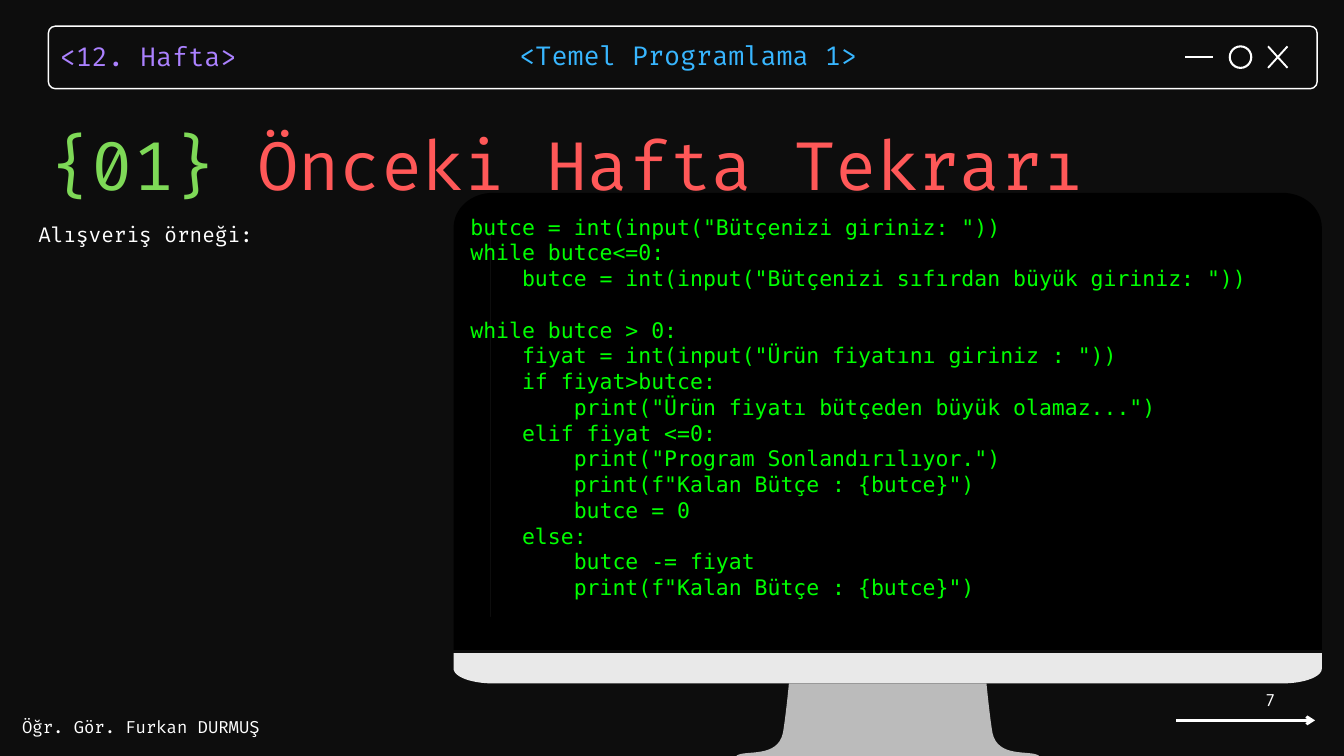
from dataclasses import dataclass

from lxml.etree import SubElement
from pptx import Presentation
from pptx.dml.color import RGBColor
from pptx.enum.shapes import MSO_CONNECTOR, MSO_SHAPE
from pptx.enum.text import MSO_ANCHOR, MSO_AUTO_SIZE, PP_ALIGN
from pptx.oxml.ns import qn
from pptx.util import Inches, Pt


@dataclass(frozen=True)
class Theme:
    background: str = "0D0D0D"
    white: str = "FFFFFF"
    purple: str = "AB81FF"
    blue: str = "38B6FF"
    green: str = "7ED957"
    red: str = "FF5858"
    screen: str = "000000"
    code: str = "00FF00"
    chin: str = "E9E9E9"
    stand: str = "BBBBBB"
    text_font: str = "Fira Code"
    code_font: str = "DejaVu Sans Mono"
    title_size: int = 72
    header_size: int = 28
    code_size: int = 23
    body_size: int = 22
    small_size: int = 18


THEME = Theme()

# Content
WEEK = "<12. Hafta>"
COURSE = "<Temel Programlama 1>"
TITLE = [("{01} ", THEME.green), ("Önceki Hafta Tekrarı", THEME.red)]
SUBTITLE = "Alışveriş örneği:"
LECTURER = "Öğr. Gör. Furkan DURMUŞ"
PAGE_NUMBER = "7"
CODE = '''butce = int(input("Bütçenizi giriniz: "))
while butce<=0:
    butce = int(input("Bütçenizi sıfırdan büyük giriniz: "))

while butce > 0:
    fiyat = int(input("Ürün fiyatını giriniz : "))
    if fiyat>butce:
        print("Ürün fiyatı bütçeden büyük olamaz...")
    elif fiyat <=0:
        print("Program Sonlandırılıyor.")
        print(f"Kalan Bütçe : {butce}")
        butce = 0
    else:
        butce -= fiyat
        print(f"Kalan Bütçe : {butce}")'''.split("\n")

# Grid of one-inch columns and rows
COLUMNS, ROWS = 20, 11.25
MONITOR_AXIS = 13.21
ICON_ROW, ICON_SIZE = 0.85, 0.32

# Left halves of the monitor parts: 2 numbers are a corner, 6 are a curve
FRAME = [(7.34, 2.87), (7.01, 2.87, 6.75, 3.1, 6.75, 3.39), (6.75, 9.67)]
SCREEN_HOLE = [(7.29, 3.41), (7.29, 9.18)]
CHIN = [(6.75, 9.72), (6.75, 9.95), (6.75, 10.07, 7.01, 10.17, 7.34, 10.17)]
STAND = [
    (11.74, 10.17),
    (11.74, 10.17, 11.69, 10.69, 11.65, 10.91),
    (11.57, 11.28, 11.1, 11.16, 10.97, 11.24),
    (10.95, 11.25, 10.96, 11.27, 10.98, 11.27),
]


def color(value):
    return RGBColor.from_string(value)


def grid(*lengths):
    return [Inches(length) for length in lengths]


def add_text(page, place, lines, size, ink, font=THEME.text_font,
             align=None, leading=None):
    """Each line is a string, or a list of (text, colour) spans."""
    box = page.shapes.add_textbox(*grid(*place))
    frame = box.text_frame
    frame.word_wrap = True
    frame.auto_size = MSO_AUTO_SIZE.SHAPE_TO_FIT_TEXT
    frame.margin_left = frame.margin_right = 0
    frame.margin_top = frame.margin_bottom = 0
    for index, line in enumerate(lines):
        para = frame.add_paragraph() if index else frame.paragraphs[0]
        para.font.size = Pt(size)
        para.font.name = font
        para.font.color.rgb = color(ink)
        if align is not None:
            para.alignment = align
        if leading:
            para.line_spacing = Pt(leading)
        for text, span_ink in [(line, ink)] if isinstance(line, str) else line:
            if text:
                span = para.add_run()
                span.text = text
                span.font.color.rgb = color(span_ink)
    return box


def add_line(page, start, end, width):
    line = page.shapes.add_connector(
        MSO_CONNECTOR.STRAIGHT, *grid(*start, *end))
    line.line.color.rgb = color(THEME.white)
    line.line.width = Pt(width)
    SubElement(line._element.spPr, qn("a:effectLst"))
    return line


def style(shape, fill=None, line=None, width=0):
    shape.shadow.inherit = False
    if fill:
        shape.fill.solid()
        shape.fill.fore_color.rgb = color(fill)
    else:
        shape.fill.background()
    if line:
        shape.line.color.rgb = color(line)
        shape.line.width = Pt(width)
    else:
        shape.line.fill.background()
    return shape


def mirrored_outline(half, steps=16):
    """Flatten the curves of a left half and add its mirror image."""
    points = []
    for part in half:
        if len(part) == 2:
            points.append(part)
            continue
        controls = [points[-1], part[:2], part[2:4], part[4:]]
        for step in range(1, steps + 1):
            t = step / steps
            weights = ((1 - t) ** 3, 3 * t * (1 - t) ** 2,
                       3 * t * t * (1 - t), t ** 3)
            points.append(tuple(
                sum(w * point[axis] for w, point in zip(weights, controls))
                for axis in (0, 1)))
    return points + [(2 * MONITOR_AXIS - x, y) for x, y in reversed(points)]


def add_outline(page, halves, fill):
    contours = [[grid(*point) for point in mirrored_outline(half)]
                for half in halves]
    builder = page.shapes.build_freeform(*contours[0][0])
    builder.add_line_segments(contours[0][1:], close=True)
    for contour in contours[1:]:
        builder.move_to(*contour[0])
        builder.add_line_segments(contour[1:], close=True)
    return style(builder.convert_to_shape(), fill)


def add_header(page):
    add_text(page, (0.89, 0.52, 3.4, 0.53), [WEEK], THEME.header_size,
             THEME.purple, leading=39.2)
    bar = page.shapes.add_shape(
        MSO_SHAPE.ROUNDED_RECTANGLE, *grid(0.72, 0.39, 18.88, 0.93))
    bar.adjustments[0] = 0.11
    style(bar, line=THEME.white, width=1.5)
    # Window buttons: close, minimise, maximise
    top, bottom = ICON_ROW - ICON_SIZE / 2, ICON_ROW + ICON_SIZE / 2
    for first, last in ((top, bottom), (bottom, top)):
        add_line(page, (18.87, first), (18.87 + 0.29, last), 2)
    add_line(page, (17.64, ICON_ROW), (18.05, ICON_ROW), 2)
    circle = page.shapes.add_shape(
        MSO_SHAPE.OVAL, *grid(18.3, top, ICON_SIZE, ICON_SIZE))
    style(circle, line=THEME.white, width=2.25)
    add_text(page, (7.73, 0.51, 5.29, 0.53), [COURSE], THEME.header_size,
             THEME.blue, leading=39.2)


def add_footer(page):
    add_text(page, (0.33, 10.67, 3.67, 0.3), [LECTURER], THEME.small_size,
             THEME.white)
    number = add_text(page, (16.75, 10.21, 2.23, 0.4), [PAGE_NUMBER],
                      THEME.small_size, THEME.white, align=PP_ALIGN.RIGHT)
    number.text_frame.auto_size = MSO_AUTO_SIZE.NONE
    number.text_frame.vertical_anchor = MSO_ANCHOR.MIDDLE
    arrow = add_line(page, (17.5, 10.72), (19.57, 10.72), 3)
    SubElement(arrow.line._get_or_add_ln(), qn("a:tailEnd"), type="arrow")


def add_monitor(page):
    add_outline(page, [FRAME, SCREEN_HOLE], THEME.screen)
    add_outline(page, [CHIN], THEME.chin)
    add_outline(page, [STAND], THEME.stand)
    screen = page.shapes.add_shape(
        MSO_SHAPE.RECTANGLE, *grid(7.32, 3.17, 11.87, 6.1))
    style(screen, THEME.screen, THEME.screen, 2)
    add_text(page, (7, 3.18, 11.87, 6.19), CODE, THEME.code_size, THEME.code,
             font=THEME.code_font)


def main():
    deck = Presentation()
    deck.slide_width, deck.slide_height = grid(COLUMNS, ROWS)
    page = deck.slides.add_slide(deck.slide_layouts[6])
    page.background.fill.solid()
    page.background.fill.fore_color.rgb = color(THEME.background)
    add_header(page)
    add_footer(page)
    add_text(page, (0.57, 3.31, 5.9, 0.37), [SUBTITLE], THEME.body_size,
             THEME.white, align=PP_ALIGN.JUSTIFY)
    add_text(page, (0.75, 1.61, 19.25, 1.41), [TITLE], THEME.title_size,
             THEME.white, leading=102.6)
    add_monitor(page)
    deck.save("out.pptx")


if __name__ == "__main__":
    main()
